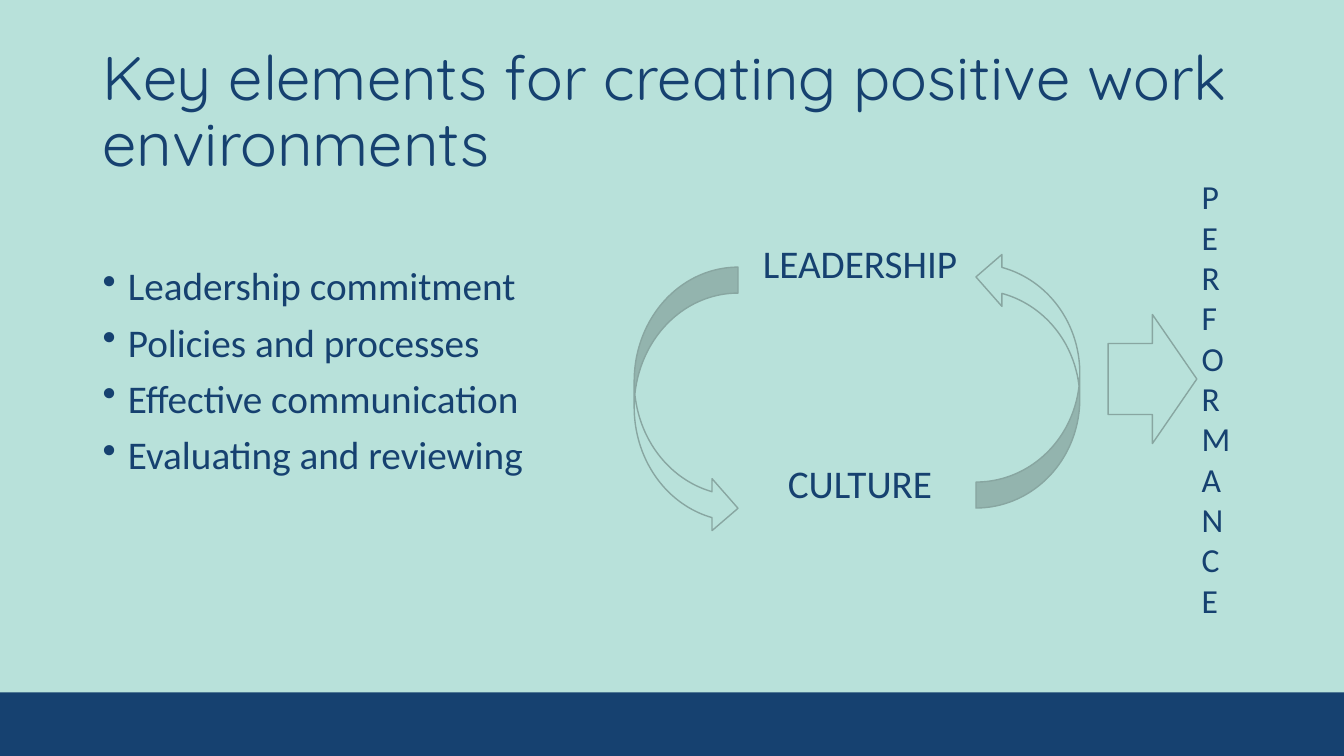
import pptx
import pptx.util
import pptx.dml.color
import pptx.enum.shapes
import pptx.enum.text
from lxml import etree

Inches, Pt = pptx.util.Inches, pptx.util.Pt
SHAPE = pptx.enum.shapes.MSO_SHAPE
ALIGN = pptx.enum.text.PP_ALIGN
ANCHOR = pptx.enum.text.MSO_ANCHOR
NAVY, MINT, GREY = "164170", "B8E1DA", "88A6A1"


def color(hex_string):
    return pptx.dml.color.RGBColor.from_string(hex_string)


def add_text(box, lines, size, font="Calibri", align=ALIGN.LEFT,
             spacing=0.9, before=0, bullet=False):
    tb = slide.shapes.add_textbox(*[Inches(v) for v in box])
    tf = tb.text_frame
    tf.word_wrap = True
    for i, line in enumerate(lines):
        p = tf.paragraphs[0] if i == 0 else tf.add_paragraph()
        p.alignment = align
        p.line_spacing = spacing
        p.space_before = Pt(before if i else 0)
        if bullet:
            pPr = p._p.get_or_add_pPr()
            pPr.set("marL", str(Inches(0.25)))
            pPr.set("indent", str(-Inches(0.25)))
            bu = etree.SubElement(pPr, pptx.oxml.ns.qn("a:buChar"))
            bu.set("char", "•")
        r = p.add_run()
        r.text = line
        r.font.name = font
        r.font.size = Pt(size)
        r.font.color.rgb = color(NAVY)
    return tf


prs = pptx.Presentation()
prs.slide_width, prs.slide_height = Inches(13.33), Inches(7.5)
slide = prs.slides.add_slide(prs.slide_layouts[6])
slide.background.fill.solid()
slide.background.fill.fore_color.rgb = color(MINT)

# Footer band
band = slide.shapes.add_shape(SHAPE.RECTANGLE, 0, Inches(6.87),
                              prs.slide_width, Inches(0.63))
band.shadow.inherit = False
band.fill.solid()
band.fill.fore_color.rgb = color(NAVY)
band.line.fill.background()

# Title
title = add_text((0.92, 0.4, 11.5, 1.45),
                 ["Key elements for creating positive work environments"],
                 44, font="Quicksand")
title.vertical_anchor = ANCHOR.MIDDLE

# Key elements
elements = ["Leadership commitment", "Policies and processes",
            "Effective communication", "Evaluating and reviewing"]
add_text((0.92, 2.6, 5.09, 2.4), elements, 28, before=10, bullet=True)

# Cycle labels
for label, top in [("LEADERSHIP", 2.38), ("CULTURE", 4.56)]:
    add_text((7.38, top, 2.3, 0.53), [label], 28, align=ALIGN.CENTER)

# Cycle arrows and the arrow to performance
arrows = [
    (SHAPE.RIGHT_ARROW, (10.99, 3.12, 0.88, 1.28), False),
    (SHAPE.CURVED_RIGHT_ARROW, (6.29, 2.65, 1.03, 2.65), False),
    (SHAPE.CURVED_LEFT_ARROW, (9.68, 2.49, 1.03, 2.55), True),
]
for kind, box, flipped in arrows:
    s = slide.shapes.add_shape(kind, *[Inches(v) for v in box])
    s.shadow.inherit = False
    s.fill.solid()
    s.fill.fore_color.rgb = color(MINT)
    s.line.color.rgb = color(GREY)
    s.line.width = Pt(1)
    if kind == SHAPE.RIGHT_ARROW:
        s.adjustments[0] = 0.55
    if flipped:
        s._element.spPr.xfrm.set("flipV", "1")

# Performance, one letter per line
add_text((11.82, 1.7, 0.88, 4.54), "PERFORMANCE", 24, spacing=1.0)

prs.save("out.pptx")
